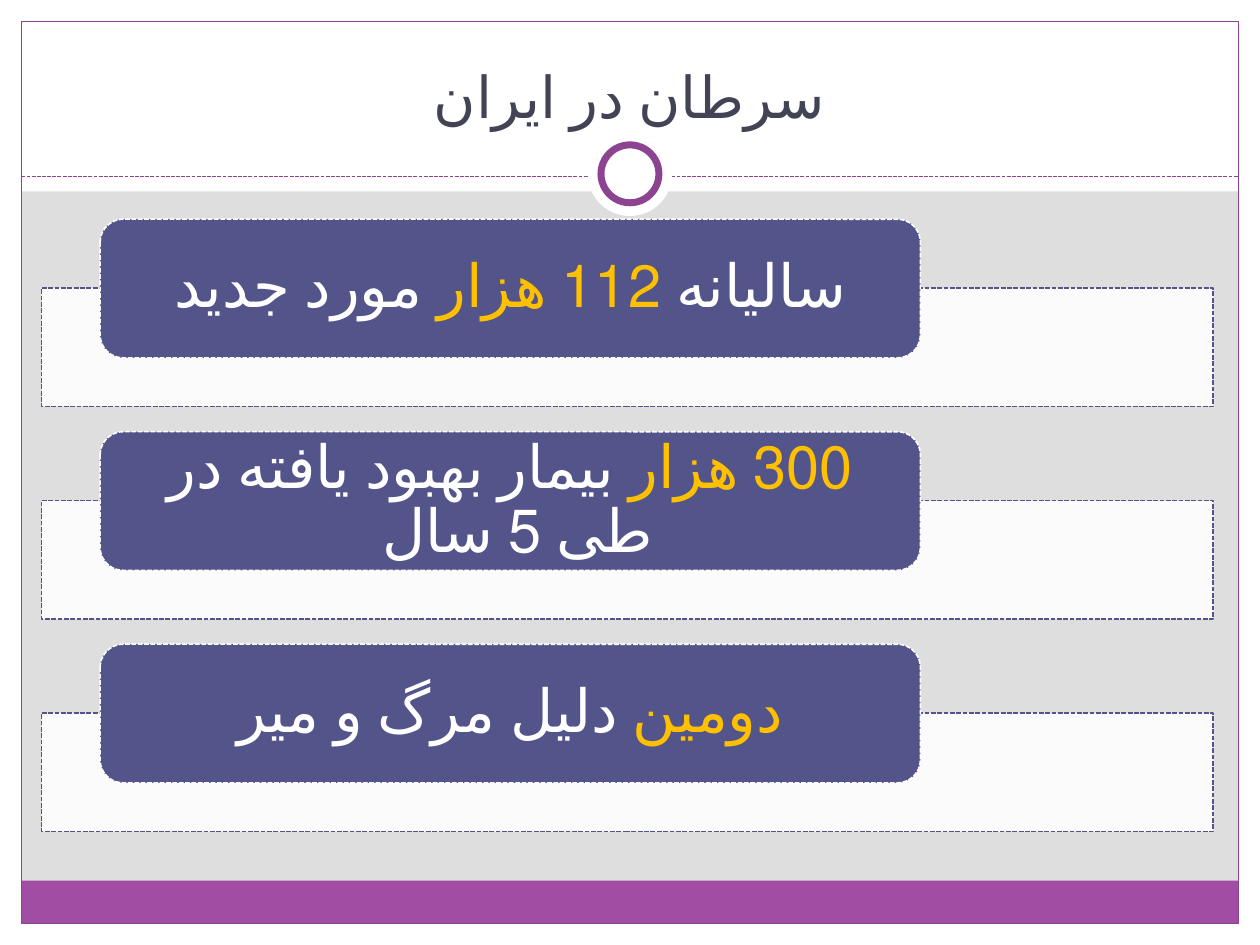
from dataclasses import dataclass

import pptx
import pptx.dml.color
import pptx.enum.dml
import pptx.enum.lang
import pptx.enum.shapes
import pptx.enum.text
import pptx.oxml.ns
import pptx.util
from lxml import etree

SHAPE = pptx.enum.shapes.MSO_SHAPE
DASH = pptx.enum.dml.MSO_LINE.SQUARE_DOT
ANCHOR = pptx.enum.text.MSO_ANCHOR
qn = pptx.oxml.ns.qn
W, H = 10, 7.5


@dataclass(frozen=True)
class Theme:
    font: str = "Cambria"
    title_size: float = 33
    body_size: float = 34
    white: str = "FFFFFF"
    ground: str = "DEDEDE"
    footer: str = "A04DA3"
    frame: str = "8D4490"
    ink: str = "424456"
    card: str = "53548A"
    accent: str = "FFC000"


T = Theme()


def rgb(color):
    return pptx.dml.color.RGBColor.from_string(color)


def place(shape, box):
    shape.left, shape.top, shape.width, shape.height = map(pptx.util.Inches, box)


def style_line(line, color, width, dashed=False):
    line.color.rgb = rgb(color)
    line.width = pptx.util.Pt(width)
    if dashed:
        line.dash_style = DASH


def add_box(s, kind, box, fill=None, line=None, width=0.75, dashed=False):
    sp = s.shapes.add_shape(kind, *map(pptx.util.Inches, box))
    sp.shadow.inherit = False
    if fill:
        sp.fill.solid()
        sp.fill.fore_color.rgb = rgb(fill)
    else:
        sp.fill.background()
    if line:
        style_line(sp.line, line, width, dashed)
    else:
        sp.line.fill.background()
    return sp


def write(p, runs, size, rtl=True):
    p.alignment = pptx.enum.text.PP_ALIGN.CENTER
    if rtl:
        p._p.get_or_add_pPr().set("rtl", "1")
    for text, color in runs:
        r = p.add_run()
        r.text = text
        r.font.name = T.font
        r.font.language_id = pptx.enum.lang.MSO_LANGUAGE_ID.FARSI
        r.font.size = pptx.util.Pt(size)
        r.font.color.rgb = rgb(color)


def add_frame(s, box, header):
    """White margins around box, header band, footer bar and outline."""
    x, y, w, h = box
    right, bottom = x + w, y + h
    footer = 0.34
    for margin in ((0, bottom, W, H - bottom), (0, 0, W, header),
                   (0, 0, x, H), (right, 0, W - right, H)):
        add_box(s, SHAPE.RECTANGLE, margin, T.white)
    add_box(s, SHAPE.RECTANGLE, (x, bottom - footer, w, footer), T.footer)
    add_box(s, SHAPE.RECTANGLE, box, line=T.frame)


def add_divider(s, x, y, w):
    """Dashed rule with a ring at its middle."""
    ends = map(pptx.util.Inches, (x, y, x + w, y))
    rule = s.shapes.add_connector(pptx.enum.shapes.MSO_CONNECTOR.STRAIGHT, *ends)
    style_line(rule.line, T.frame, 0.75, dashed=True)
    etree.SubElement(rule._element.spPr, qn("a:effectLst"))
    cx, cy = x + w / 2, y - 0.02
    for d, line in ((0.67, None), (0.46, T.frame)):
        add_box(s, SHAPE.OVAL, (cx - d / 2, cy - d / 2, d, d), T.white, line, 4)


def add_title(s, box, text):
    title = s.shapes.title
    place(title, box)
    tf = title.text_frame
    tf.word_wrap = True
    tf.vertical_anchor = ANCHOR.BOTTOM
    write(tf.paragraphs[0], [(text, T.ink)], T.title_size)
    title._element.getparent().append(title._element)  # in front of the header


def add_fact(s, box, runs, rtl):
    """Pale strip with a rounded card overlapping its top edge."""
    x, y, w, h = box
    strip_h, card_h = 0.94, 1.1
    strip = add_box(s, SHAPE.RECTANGLE, (x, y + h - strip_h, w, strip_h),
                    T.white, T.card, 0.9, dashed=True)
    color = strip._element.spPr.find(qn("a:solidFill"))[0]
    etree.SubElement(color, qn("a:alpha"), val="90000")

    card = add_box(s, SHAPE.ROUNDED_RECTANGLE, (x + 0.05 * w, y, 0.7 * w, card_h),
                   T.card, T.white, 0.9, dashed=True)
    tf = card.text_frame
    tf.word_wrap = True
    tf.vertical_anchor = ANCHOR.MIDDLE
    tf.margin_left = tf.margin_right = pptx.util.Inches(0.25)
    tf.margin_top = tf.margin_bottom = 0
    p = tf.paragraphs[0]
    p.line_spacing = 0.9
    write(p, runs, T.body_size, rtl)


def add_facts(s, box, facts):
    x, y, w, h = box
    gap = 0.2
    row = (h - gap * (len(facts) - 1)) / len(facts)
    for i, (runs, rtl) in enumerate(facts):
        add_fact(s, (x, y + i * (row + gap), w, row), runs, rtl)


def main():
    prs = pptx.Presentation()
    prs.slide_width, prs.slide_height = pptx.util.Inches(W), pptx.util.Inches(H)
    s = prs.slides.add_slide(prs.slide_layouts[5])
    s.background.fill.solid()
    s.background.fill.fore_color.rgb = rgb(T.ground)

    add_frame(s, (0.17, 0.17, 9.66, 7.16), header=1.52)
    add_divider(s, 0.17, 1.4, 9.66)
    add_title(s, (0.33, 0.25, 9.33, 0.83), "سرطان در ایران")
    add_facts(s, (0.33, 1.74, 9.3, 4.86), [
        ([("سالیانه ", T.white), ("112 هزار ", T.accent),
          ("مورد جدید", T.white)], True),
        ([("300 هزار ", T.accent),
          ("بیمار بهبود یافته در طی 5 سال ", T.white)], True),
        ([("دومین", T.accent), (" دلیل مرگ و میر", T.white)], False),
    ])
    prs.save("out.pptx")


if __name__ == "__main__":
    main()
